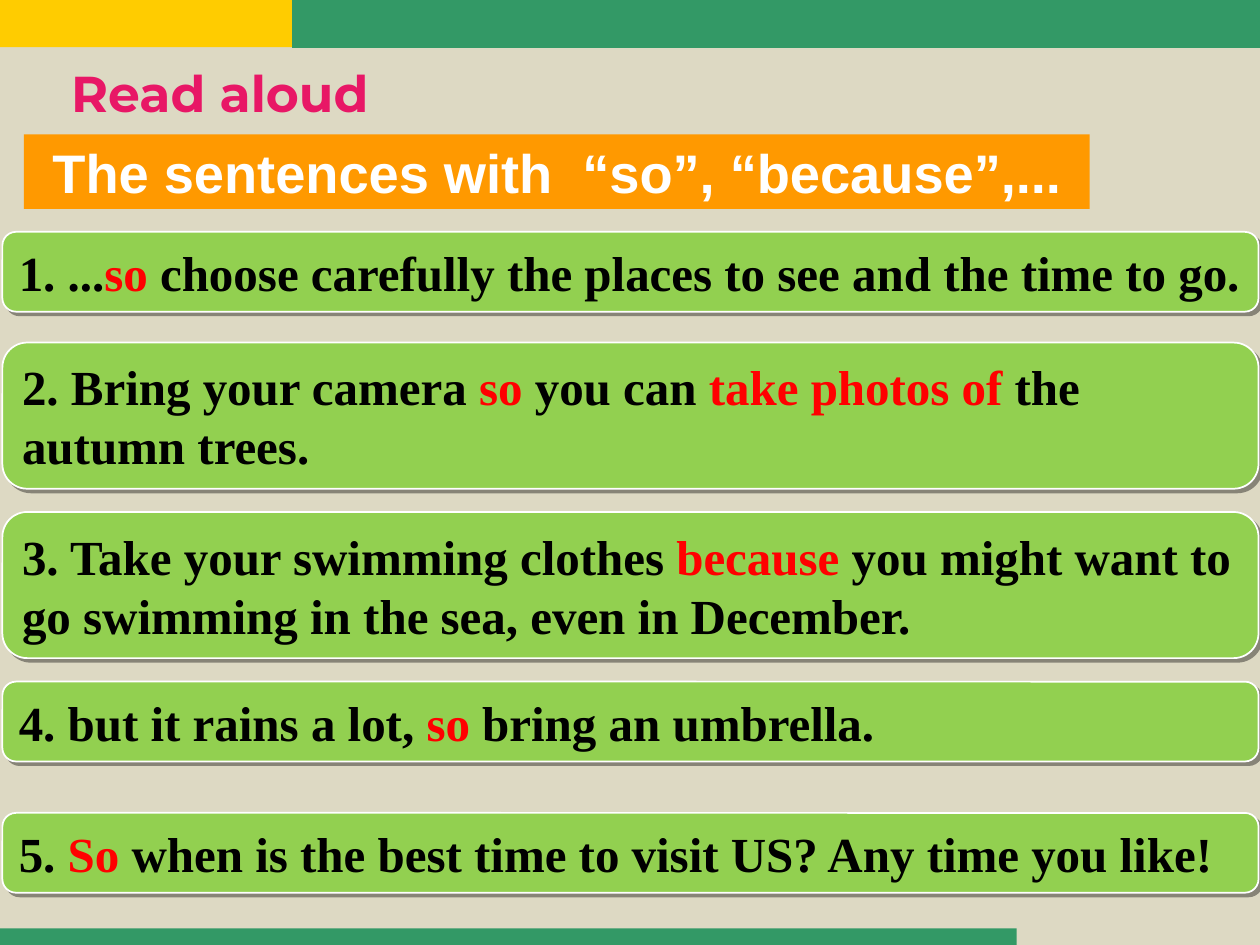
from lxml.etree import SubElement
from pptx import Presentation
from pptx.dml.color import RGBColor
from pptx.enum.shapes import MSO_SHAPE as Shape
from pptx.enum.text import MSO_ANCHOR as Anchor, PP_ALIGN as Align
from pptx.oxml.ns import qn
from pptx.util import Pt

GREEN, YELLOW, ORANGE, LIME = "339966", "FFCC00", "FF9900", "92D050"
BLACK, WHITE, RED, PINK, SAND = "000000", "FFFFFF", "FF0000", "E81766", "DDD9C3"
ONE_LINE, TWO_LINES = 45.6, 83.5
SENTENCES = [
    (132.5, ONE_LINE, ["1. ...", "so", " choose carefully the places to see and the time to go."]),
    (195.8, TWO_LINES, ["2. Bring your camera ", "so", " you can", " take photos of",
                        " the autumn trees."]),
    (292.6, TWO_LINES, ["3. Take your swimming clothes ", "because",
                        " you might want to go swimming in the sea, even in December."]),
    (389.5, ONE_LINE, ["4. but it rains a lot, ", "so", " bring an umbrella."]),
    (464.5, ONE_LINE, ["5. ", "So", " when is the best time to visit US? Any time you like!"]),
]


def paint(color_format, color):
    """Set a fill or font colour from a hex string."""
    color_format.rgb = RGBColor.from_string(color)


def style_span(span, font, size, color):
    """Make a run bold in the given font, size and colour."""
    span.font.name, span.font.size, span.font.bold = font, Pt(size), True
    paint(span.font.color, color)


def add_block(slide, kind, left, top, width, height, color):
    """Add a filled shape without line or shadow."""
    block = slide.shapes.add_shape(kind, Pt(left), Pt(top), Pt(width), Pt(height))
    block.shadow.inherit = False
    block.fill.solid()
    paint(block.fill.fore_color, color)
    block.line.fill.background()
    return block


def write_line(box, text, font, size, color):
    """Write one centred, unwrapped line into a box."""
    frame = box.text_frame
    frame.text = text
    frame.word_wrap = False
    para = frame.paragraphs[0]
    para.alignment = Align.CENTER
    style_span(para.runs[0], font, size, color)


def add_hard_shadow(shape):
    """Give a shape a sharp, translucent shadow to the lower right."""
    effects = shape._element.spPr.find(qn("a:effectLst"))
    shadow = SubElement(effects, qn("a:outerShdw"), blurRad="0", dist=str(Pt(3)),
                        dir="2700000", algn="ctr", rotWithShape="0")
    tint = SubElement(shadow, qn("a:srgbClr"), val=BLACK)
    SubElement(tint, qn("a:alpha"), val="39000")


def add_sentence(slide, top, height, parts):
    """Add a rounded card whose every second part is red."""
    card = add_block(slide, Shape.ROUNDED_RECTANGLE, 1.4, top, 717.8, height, LIME)
    card.adjustments[0] = 0.17
    paint(card.line.color, WHITE)
    card.line.width = Pt(1)
    add_hard_shadow(card)
    frame = card.text_frame
    frame.word_wrap = True
    frame.vertical_anchor = Anchor.MIDDLE
    para = frame.paragraphs[0]
    para.alignment = Align.LEFT
    for index, part in enumerate(parts):
        span = para.add_run()
        span.text = part
        style_span(span, "Times New Roman", 28, RED if index % 2 else BLACK)


def add_title(slide):
    """Add the lesson title."""
    box = slide.shapes.add_textbox(Pt(13.7), Pt(31.7), Pt(223.9), Pt(45.4))
    write_line(box, "Read aloud", "Montserrat", 28.8, PINK)


def add_heading(slide):
    """Add the orange heading band."""
    band = add_block(slide, Shape.RECTANGLE, 13.7, 76.8, 609, 42.6, ORANGE)
    write_line(band, "The sentences with  “so”, “because”,...", "Arial", 31, WHITE)
    frame = band.text_frame
    frame.vertical_anchor = Anchor.MIDDLE
    frame.margin_left = frame.margin_right = Pt(9.4)
    frame.margin_top = frame.margin_bottom = Pt(4.3)


def main():
    """Build and save the slide."""
    deck = Presentation()
    deck.slide_width, deck.slide_height = Pt(720), Pt(540)
    page = deck.slides.add_slide(deck.slide_layouts[6])
    page.background.fill.solid()
    paint(page.background.fill.fore_color, SAND)
    add_block(page, Shape.RECTANGLE, 0, 0, 496, 27, YELLOW)
    add_block(page, Shape.RECTANGLE, 167, 0, 553, 27.4, GREEN)
    add_block(page, Shape.RECTANGLE, 0, 530.6, 581, 9.4, GREEN)
    add_title(page)
    add_heading(page)
    for top, height, parts in SENTENCES:
        add_sentence(page, top, height, parts)
    deck.save("out.pptx")


if __name__ == "__main__":
    main()
